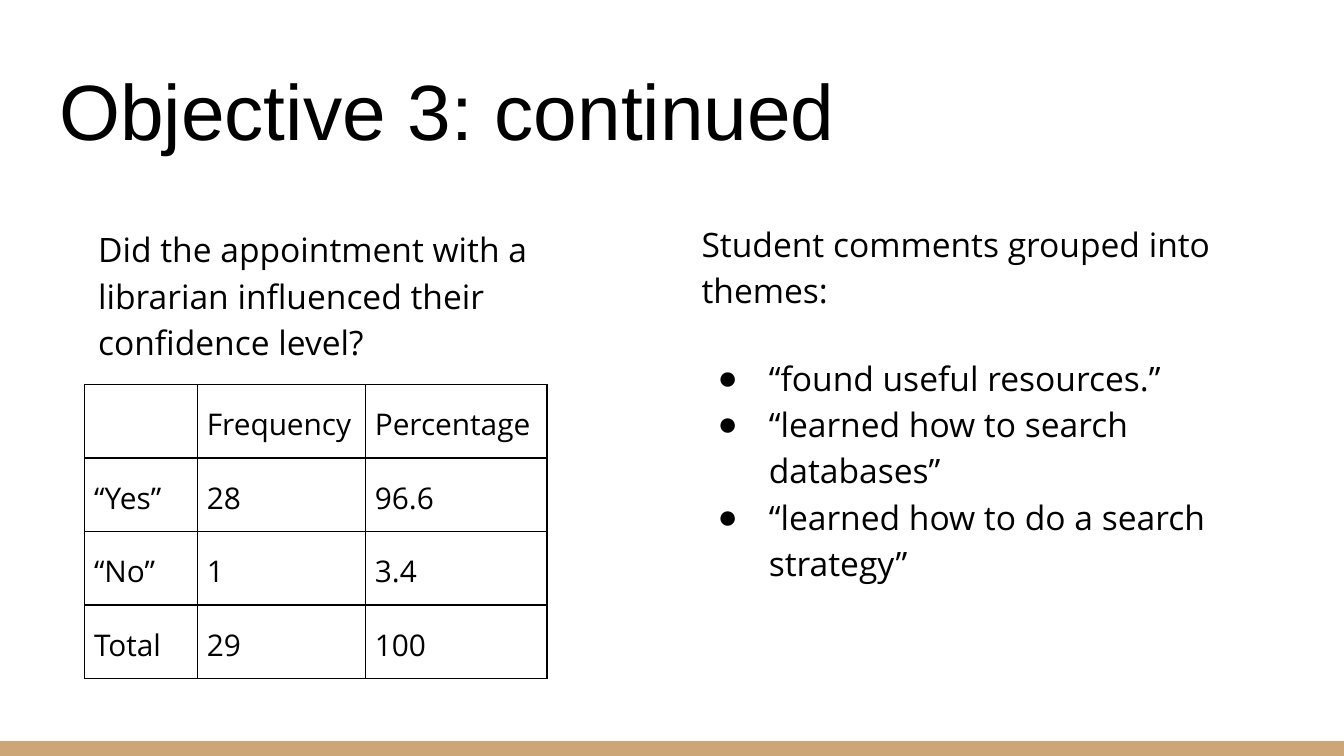
"""Build the slide on objective 3: a survey table beside comment themes."""
from lxml.etree import SubElement
from pptx import Presentation
from pptx.dml.color import RGBColor
from pptx.enum.shapes import MSO_SHAPE
from pptx.enum.text import MSO_ANCHOR, MSO_AUTO_SIZE, PP_ALIGN
from pptx.oxml.ns import qn
from pptx.util import Inches, Pt

TITLE = "Objective 3: continued"
ASK = "Did the appointment with a librarian influenced their confidence level?"
LEAD = "Student comments grouped into themes:"
THEMES = [
    "“found useful resources.”",
    "“learned how to search databases”",
    "“learned how to do a search strategy”",
]
ROWS = [
    ("", "Frequency", "Percentage"),
    ("“Yes”", "28", "96.6"),
    ("“No”", "1", "3.4"),
    ("Total", "29", "100"),
]
COLS = [0.84, 1.25, 1.35]
WIDE, ROW, BAR = 10, 0.42, 0.11
HIGH = WIDE * 9 / 16
LEFT, TOP = 0.63, 2.86
INK, TAN = "000000", "CCA677"
BODY, HEAD = "Open Sans", "Arial"


def tint(code):
    return RGBColor.from_string(code)


def write(para, text, size, font=BODY, lines=1.15, after=0):
    para.alignment = PP_ALIGN.LEFT
    para.line_spacing = lines
    para.space_before, para.space_after = Pt(0), Pt(after)
    run = para.add_run()
    run.text = text
    run.font.size, run.font.name = Pt(size), font
    run.font.color.rgb = tint(INK)


def place(shape, box, anchor=MSO_ANCHOR.TOP):
    shape.left, shape.top, shape.width, shape.height = map(Inches, box)
    frame = shape.text_frame
    frame.word_wrap = True
    frame.auto_size = MSO_AUTO_SIZE.NONE
    frame.vertical_anchor = anchor
    frame.margin_left = frame.margin_right = Inches(0.1)
    frame.margin_top = frame.margin_bottom = Inches(0.1)
    return frame


def mark(para, sign=None):
    props = para._p.get_or_add_pPr()
    props.set("marL", str(Inches(0.5 if sign else 0)))
    props.set("indent", str(Inches(-0.38 if sign else 0)))
    if sign:
        hue = SubElement(props, qn("a:buClr"))
        SubElement(hue, qn("a:srgbClr"), val=INK)
        SubElement(props, qn("a:buFont"), typeface=HEAD)
        SubElement(props, qn("a:buChar"), char=sign)
    else:
        SubElement(props, qn("a:buNone"))


def edge(cell):
    props = cell._tc.get_or_add_tcPr()
    for i, side in enumerate(("lnL", "lnR", "lnT", "lnB")):
        line = props.makeelement(qn(f"a:{side}"), {"w": str(Pt(1))})
        fill = SubElement(line, qn("a:solidFill"))
        SubElement(fill, qn("a:srgbClr"), val=INK)
        props.insert(i, line)


def grid(slide):
    frame = slide.shapes.add_table(
        len(ROWS), len(COLS), Inches(LEFT), Inches(TOP),
        Inches(sum(COLS)), Inches(ROW * len(ROWS)))
    table = frame.table
    table.first_row = table.horz_banding = False
    for col, width in zip(table.columns, COLS):
        col.width = Inches(width)
    for r, row in enumerate(ROWS):
        table.rows[r].height = Inches(ROW)
        for c, text in enumerate(row):
            cell = table.cell(r, c)
            cell.margin_left = cell.margin_right = Inches(0.07)
            cell.margin_top = cell.margin_bottom = Inches(0.1)
            cell.fill.background()
            edge(cell)
            if text:
                write(cell.text_frame.paragraphs[0], text, 16)
    frame.height = Inches(2.03)


def main():
    deck = Presentation()
    deck.slide_width, deck.slide_height = Inches(WIDE), Inches(HIGH)
    slide = deck.slides.add_slide(deck.slide_layouts[3])
    head, left, right = slide.placeholders

    bar = slide.shapes.add_shape(
        MSO_SHAPE.RECTANGLE, 0, Inches(HIGH - BAR), Inches(WIDE), Inches(BAR))
    bar.shadow.inherit = False
    bar.fill.solid()
    bar.fill.fore_color.rgb = tint(TAN)
    bar.line.fill.background()

    frame = place(head, (0.34, 0.35, 9.32, 0.91), MSO_ANCHOR.BOTTOM)
    write(frame.paragraphs[0], TITLE, 42, HEAD, 1.0)

    para = place(left, (LEFT, 1.56, 3.8, 3.67)).paragraphs[0]
    write(para, ASK, 18, after=16)
    mark(para)

    frame = place(right, (5.12, 1.52, 4.45, 3.74))
    para = frame.paragraphs[0]
    write(para, LEAD, 18, after=22)
    mark(para)
    for theme in THEMES:
        para = frame.add_paragraph()
        write(para, theme, 18)
        mark(para, "●")

    grid(slide)
    deck.save("out.pptx")


if __name__ == "__main__":
    main()
